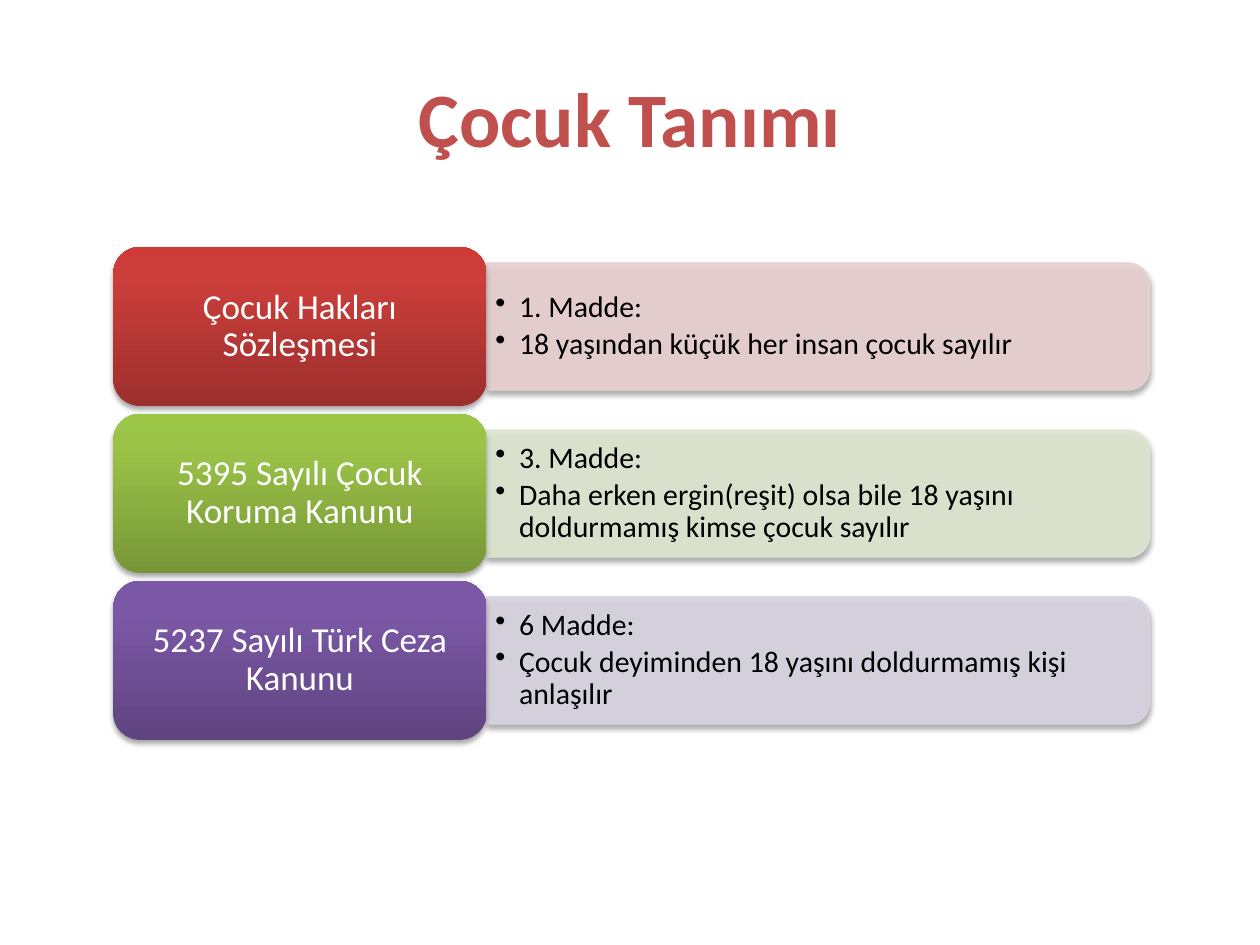
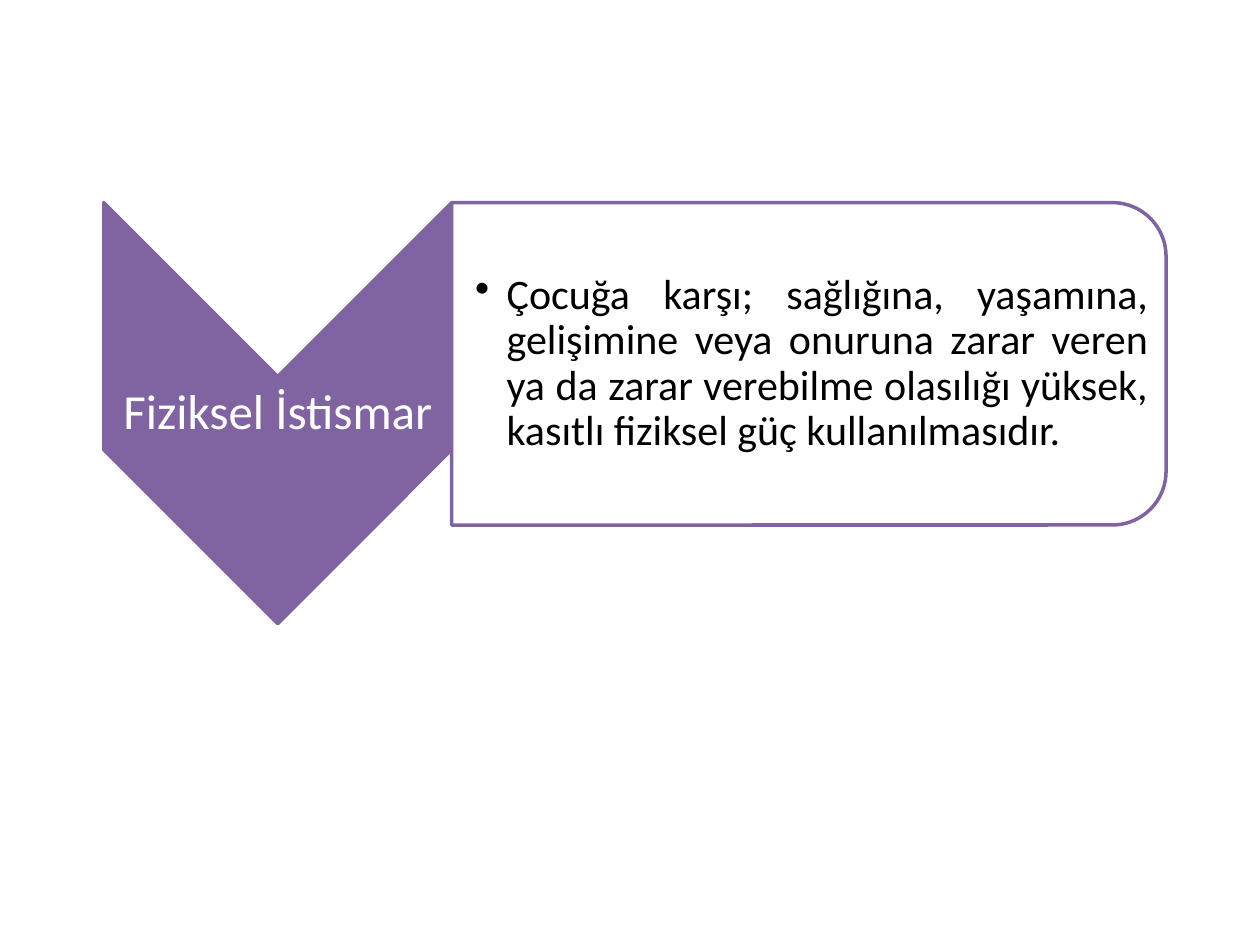
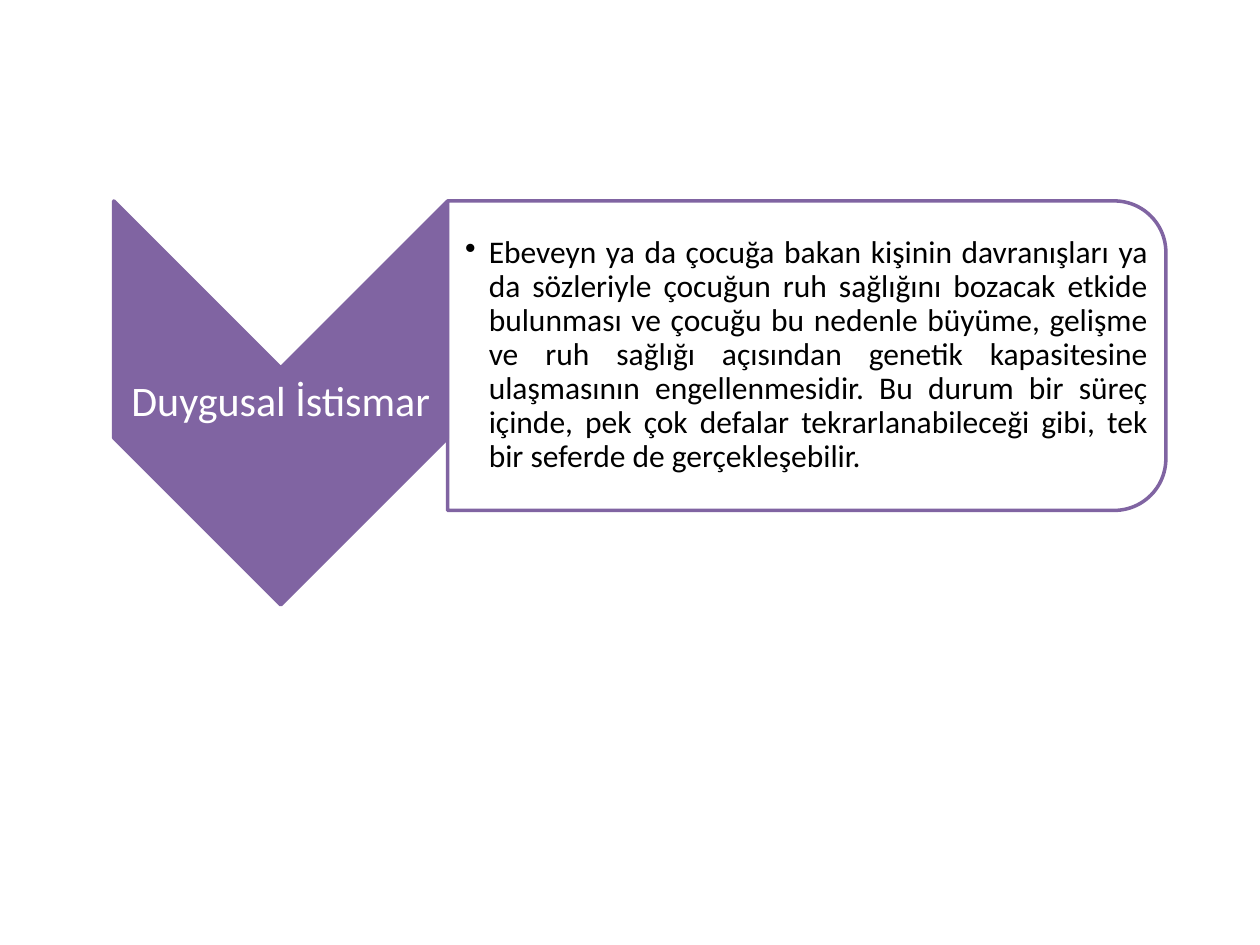
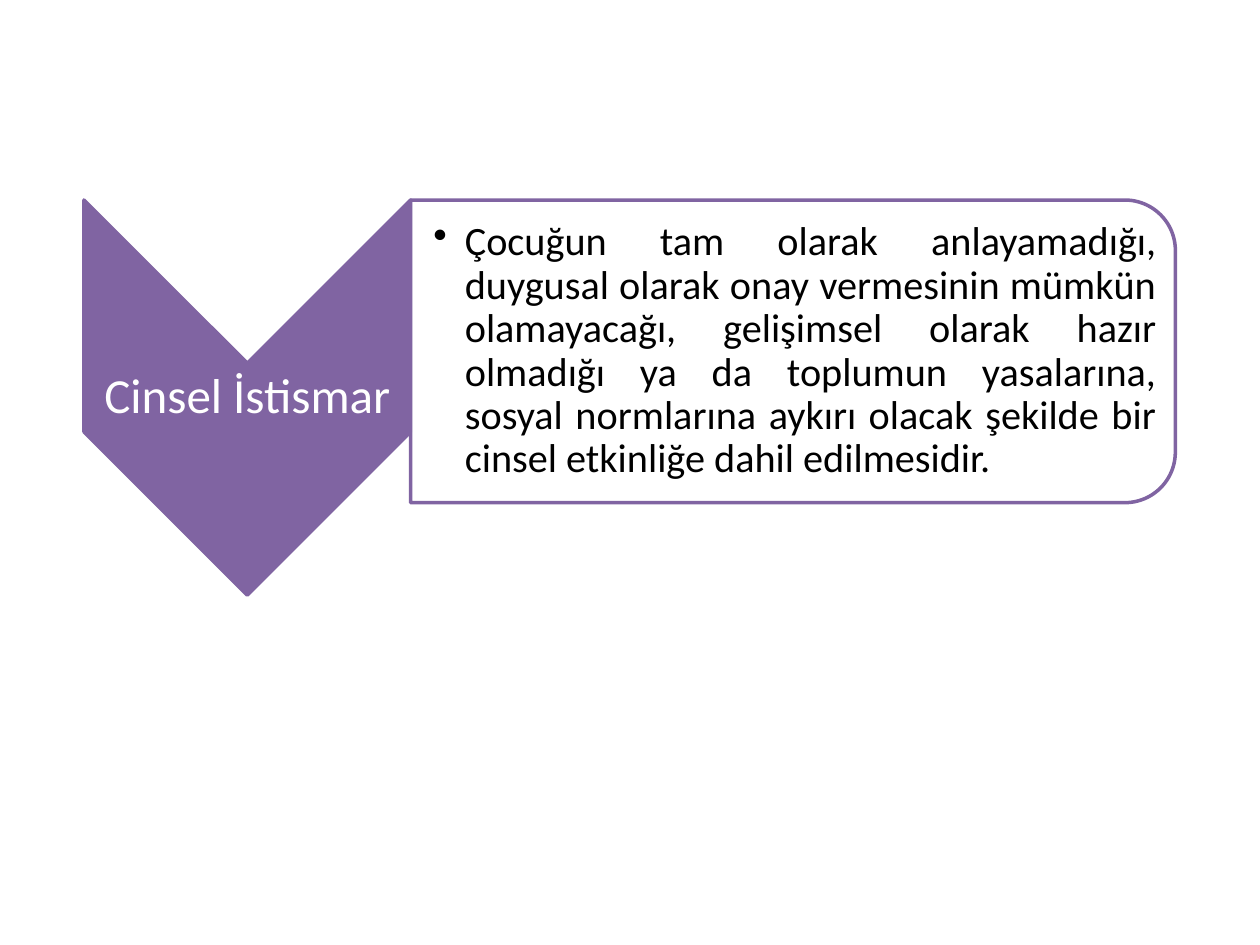
"""Build four slides on the legal definition of a child and on kinds of abuse."""
from copy import deepcopy

from lxml import etree
from pptx import Presentation
from pptx.dml.color import RGBColor
from pptx.enum.shapes import MSO_SHAPE
from pptx.enum.text import MSO_ANCHOR, PP_ALIGN
from pptx.oxml.ns import qn
from pptx.util import Pt

CENTER, LEFT, JUSTIFY = PP_ALIGN.CENTER, PP_ALIGN.LEFT, PP_ALIGN.JUSTIFY
MIDDLE = MSO_ANCHOR.MIDDLE
ROUNDED, CHEVRON = MSO_SHAPE.ROUNDED_RECTANGLE, MSO_SHAPE.CHEVRON
ROUND_TWO = MSO_SHAPE.ROUND_2_SAME_RECTANGLE
TITLE_ONLY, BLANK = 5, 6
FONT = "Calibri"
COLORS = {"title": "C0504D", "text": "000000", "white": "FFFFFF", "purple": "8064A2"}


def write_text(box, lines, size, color="text", align=LEFT, bold=None, indent=0,
               margins=(7.2, 3.6, 7.2, 3.6), spacing=0.9, after=0.15):
    frame = box.text_frame
    frame.word_wrap = True
    frame.vertical_anchor = MIDDLE
    (frame.margin_left, frame.margin_top,
     frame.margin_right, frame.margin_bottom) = [Pt(margin) for margin in margins]
    frame.text = "\n".join(lines)
    for para in frame.paragraphs:
        para.alignment = align
        para.line_spacing = spacing
        para.space_after = Pt(size * after)
        font = para.runs[0].font
        font.name, font.size, font.bold = FONT, Pt(size), bold
        font.color.rgb = RGBColor.from_string(COLORS[color])
        if indent:
            para.level = 1
            props = para._p.get_or_add_pPr()
            props.set("marL", str(Pt(indent)))
            props.set("indent", str(-Pt(indent)))
            etree.SubElement(props, qn("a:buChar"), char="•")


def add_figure(page, kind, left, top, width, height, fill=None, line=None,
               line_width=0.75, opacity=None, turned=False, shadow=False):
    if turned:
        left, top = left + (width - height) / 2, top + (height - width) / 2
        width, height = height, width
    figure = page.shapes.add_shape(kind, Pt(left), Pt(top), Pt(width), Pt(height))
    figure.rotation = 90 if turned else 0
    figure.shadow.inherit = False
    if fill:
        figure.fill.solid()
        figure.fill.fore_color.rgb = RGBColor.from_string(fill)
    if opacity:
        color = figure._element.spPr.find(qn("a:solidFill"))[0]
        etree.SubElement(color, qn("a:alpha"), val=str(opacity * 1000))
    if line:
        figure.line.color.rgb = RGBColor.from_string(line)
        figure.line.width = Pt(line_width)
    else:
        figure.line.fill.background()
    if shadow:
        effects = figure._element.spPr.find(qn("a:effectLst"))
        outer = etree.SubElement(effects, qn("a:outerShdw"), blurRad=str(Pt(3.1)),
                                 dist=str(Pt(1.8)), dir="5400000", rotWithShape="0")
        black = etree.SubElement(outer, qn("a:srgbClr"), val=COLORS["text"])
        etree.SubElement(black, qn("a:alpha"), val="35000")
    return figure


deck = Presentation()
deck.slide_width, deck.slide_height = Pt(720), Pt(540)

page = deck.slides.add_slide(deck.slide_layouts[TITLE_ONLY])
title = page.shapes.title
title.left, title.top, title.width, title.height = Pt(36), Pt(21.6), Pt(648), Pt(90)
write_text(title, ["Çocuk Tanımı"], 44, color="title", align=CENTER, bold=True,
           spacing=1.0, after=0)

laws = [
    ("Çocuk Hakları Sözleşmesi",
     ["1. Madde:", "18 yaşından küçük her insan çocuk sayılır"],
     "E8D0D0", ("9C2F2D", "CB3E3A", "CE3B37")),
    ("5395 Sayılı Çocuk Koruma Kanunu",
     ["3. Madde:",
      "Daha erken ergin(reşit) olsa bile 18 yaşını doldurmamış kimse çocuk sayılır"],
     "DEE7D1", ("779737", "9BC348", "9DC746")),
    ("5237 Sayılı Türk Ceza Kanunu",
     ["6 Madde:", "Çocuk deyiminden 18 yaşını doldurmamış kişi anlaşılır"],
     "D8D3E0", ("5F4480", "7B58A6", "7C57A8")),
]
label_left, label_width, label_height = 64.8, 213.2, 90.8
band_left, band_width, band_height = label_left + label_width, 378.8, 72.6
for row, (law, articles, tint, shades) in enumerate(laws):
    top = 141.2 + row * 95.4
    band_top = top + (label_height - band_height) / 2
    add_figure(page, ROUND_TWO, band_left, band_top, band_width, band_height,
               fill=tint, line=tint, opacity=90, turned=True, shadow=True)
    box = page.shapes.add_textbox(Pt(band_left), Pt(band_top + 3.6),
                                  Pt(band_width - 3), Pt(band_height - 7.2))
    write_text(box, articles, 17, indent=13.5, margins=(5.1, 2.6, 5.1, 2.6))

    label = add_figure(page, ROUNDED, label_left, top, label_width, label_height,
                       shadow=True)
    label.fill.gradient()
    label.fill.gradient_angle = 90
    stop_list = label._element.spPr.find(".//" + qn("a:gsLst"))
    stop_list.append(deepcopy(stop_list[0]))
    for stop, position, shade in zip(label.fill.gradient_stops, (0, 0.8, 1), shades):
        stop.position = position
        stop.color.rgb = RGBColor.from_string(shade)
    box = page.shapes.add_textbox(Pt(label_left + 4.4), Pt(top + 4.4),
                                  Pt(label_width - 8.8), Pt(label_height - 8.8))
    write_text(box, [law], 20, color="white", align=CENTER,
               margins=(6, 3, 6, 3), after=0.35)

abuses = [
    ("Fiziksel İstismar", 28,
     "Çocuğa karşı; sağlığına, yaşamına, gelişimine veya onuruna zarar veren ya da "
     "zarar verebilme olasılığı yüksek, kasıtlı fiziksel güç kullanılmasıdır.",
     24, 18, 13.4, 59.3, 115.8, 198.8, 408.2),
    ("Duygusal İstismar", 24,
     "Ebeveyn ya da çocuğa bakan kişinin davranışları ya da sözleriyle çocuğun ruh "
     "sağlığını bozacak etkide bulunması ve çocuğu bu nedenle büyüme, gelişme ve ruh "
     "sağlığı açısından genetik kapasitesine ulaşmasının engellenmesidir. Bu durum bir "
     "süreç içinde, pek çok defalar tekrarlanabileceği gibi, tek bir seferde de "
     "gerçekleşebilir.",
     18, 13.5, 10, 65, 114.8, 190.8, 410.4),
    ("Cinsel İstismar", 28,
     "Çocuğun tam olarak anlayamadığı, duygusal olarak onay vermesinin mümkün "
     "olamayacağı, gelişimsel olarak hazır olmadığı ya da toplumun yasalarına, sosyal "
     "normlarına aykırı olacak şekilde bir cinsel etkinliğe dahil edilmesidir.",
     23, 18, 13, 48, 114.3, 186.6, 437),
]
purple = COLORS["purple"]
for (abuse, label_size, meaning, size, indent, inset,
     left, top, width, panel_width) in abuses:
    page = deck.slides.add_slide(deck.slide_layouts[BLANK])
    height = width * 1.21
    add_figure(page, CHEVRON, left, top, width, height, fill=purple, line=purple,
               line_width=2, turned=True)
    box = page.shapes.add_textbox(Pt(left), Pt(top + width / 2),
                                  Pt(width), Pt(height - width))
    write_text(box, [abuse], label_size, color="white", align=CENTER,
               margins=(1.4, 1.4, 1.4, 1.4), after=0.35)

    panel_left, panel_height = left + width, height * 0.766
    add_figure(page, ROUND_TWO, panel_left, top, panel_width, panel_height,
               fill=COLORS["white"], line=purple, line_width=2, opacity=90, turned=True)
    box = page.shapes.add_textbox(Pt(panel_left), Pt(top + 9),
                                  Pt(panel_width - 9), Pt(panel_height - 18))
    write_text(box, [meaning], size, align=JUSTIFY, indent=indent,
               margins=(inset, 1.2, 1.2, 1.2))

deck.save("out.pptx")
